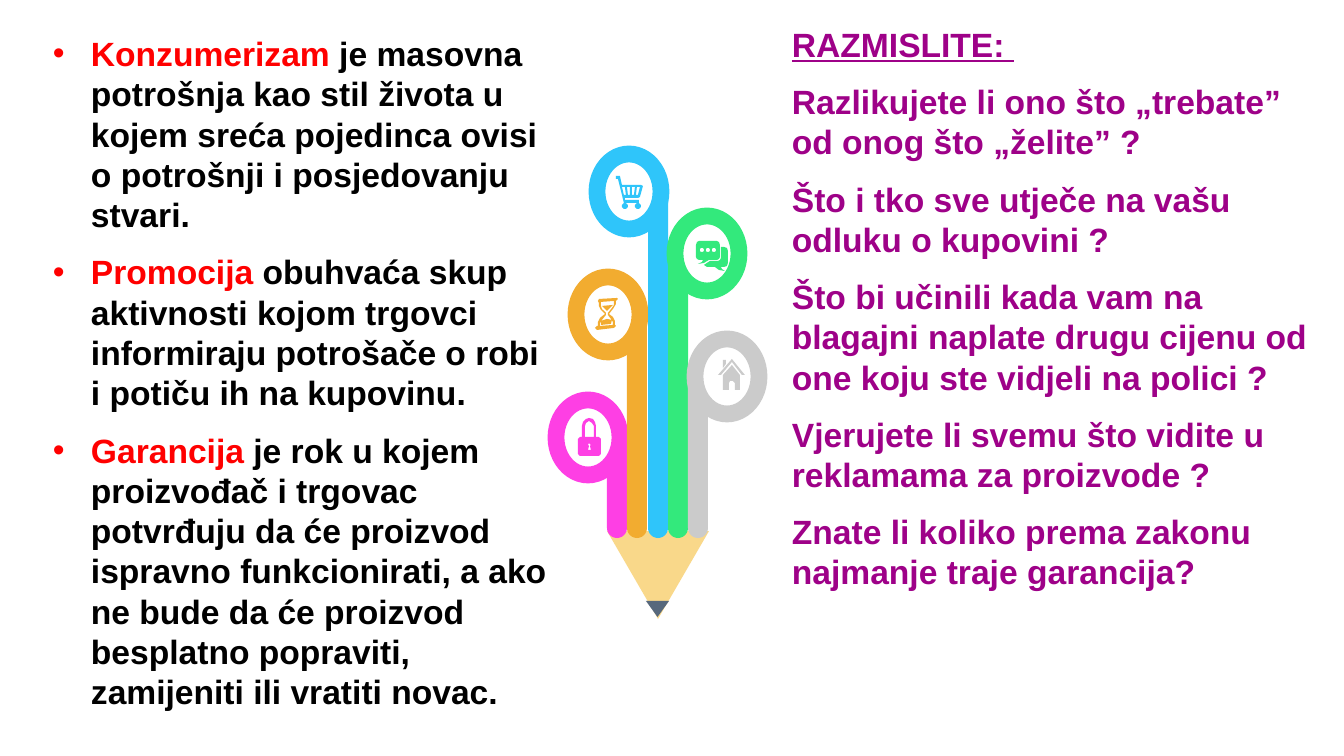
import lxml.etree
import pptx
import pptx.dml.color
import pptx.enum.shapes
import pptx.enum.text
import pptx.oxml.ns
import pptx.util

PX = 914400 / 100.8
RGB = pptx.dml.color.RGBColor
SHAPE = pptx.enum.shapes.MSO_SHAPE

WHITE = RGB(0xFF, 0xFF, 0xFF)
BLACK = RGB(0x00, 0x00, 0x00)
RED = RGB(0xFF, 0x00, 0x00)
PURPLE = RGB(0x9E, 0x01, 0x88)
WOOD = RGB(0xF5, 0xB3, 0x17)
LEAD = RGB(0x57, 0x68, 0x7C)
PINK = RGB(0xFE, 0x3F, 0xE4)
ORANGE = RGB(0xF2, 0xAC, 0x30)
BLUE = RGB(0x2F, 0xC5, 0xFA)
GREEN = RGB(0x33, 0xE9, 0x7C)
GREY = RGB(0xCB, 0xCB, 0xCB)

# Pencil strips, left to right: colour, top, ring offset from the strip
STRIPS = [(PINK, 438, -51), (ORANGE, 315, -51), (BLUE, 192, -51),
          (GREEN, 254, 7), (GREY, 377, 7)]
STRIP_LEFT, STRIP_PITCH, STRIP_W, STRIP_BOTTOM = 607, 20.25, 20, 538
RING_W, RING_H = 64, 75

TERMS = [
    ("Konzumerizam", " je masovna potrošnja kao stil života u kojem sreća "
     "pojedinca ovisi o potrošnji i posjedovanju stvari."),
    ("Promocija", " obuhvaća skup aktivnosti kojom trgovci informiraju "
     "potrošače o robi i potiču ih na kupovinu."),
    ("Garancija", " je rok u kojem proizvođač i trgovac potvrđuju da će "
     "proizvod ispravno funkcionirati, a ako ne bude da će proizvod "
     "besplatno popraviti, zamijeniti ili vratiti novac."),
]
HEADING = "RAZMISLITE: "
QUESTIONS = [
    "Razlikujete li ono što „trebate” od onog što „želite” ?",
    "Što i tko sve utječe na vašu odluku o kupovini ?",
    "Što bi učinili kada vam na blagajni naplate drugu cijenu od one koju "
    "ste vidjeli na polici ?",
    "Vjerujete li svemu što vidite u reklamama za proizvode ?",
    "Znate li koliko prema zakonu najmanje traje garancija?",
]


def px(n):
    return pptx.util.Emu(round(n * PX))


def dot(cx, cy, r):
    corners = [(r, -1), (r, 1), (1, r), (-1, r),
               (-r, 1), (-r, -1), (-1, -r), (1, -r)]
    return [(cx + x, cy + y) for x, y in corners]


# Icons: colour, left, top, outlines (inner outlines are holes)
CHAT = (GREEN, 696, 241, [
    [(3, 0), (21, 0), (23, 1), (24, 4), (24, 16), (23, 18), (21, 19), (13, 19),
     (8, 22), (2, 23), (6, 21), (7, 19), (3, 19), (1, 18), (0, 16), (0, 4), (1, 1)],
    [(25, 6), (28, 6), (31, 7), (32, 10), (32, 22), (31, 25), (28, 26), (25, 26),
     (26, 28), (29, 30), (23, 29), (19, 26), (11, 26), (8, 24), (14, 20),
     (22, 20), (24, 19), (25, 17)],
    dot(6, 9, 2), dot(12, 9, 2), dot(18, 9, 2)])
HOURGLASS = (ORANGE, 595, 298, [
    [(4, 1), (22, 0), (23, 1), (21, 3), (21, 6), (18, 11), (14, 16), (18, 19),
     (20, 23), (20, 27), (21, 28), (19, 30), (2, 32), (0, 30), (2, 28), (3, 28),
     (3, 24), (5, 20), (10, 16), (6, 12), (4, 8), (4, 5), (3, 3)],
    [(6, 4), (6, 8), (7, 11), (11, 15), (11, 17), (7, 22), (5, 25), (5, 28),
     (18, 27), (18, 24), (16, 21), (13, 17), (13, 15), (17, 10), (19, 7), (19, 3)],
    [(7, 8), (18, 7), (16, 9), (12, 13), (8, 9)],
    [(12, 21), (17, 22), (16, 26), (6, 27), (6, 23)]])
CART = (BLUE, 616, 176, [
    [(0, 0), (4, 0), (6, 9), (25, 9), (27, 10), (24, 21), (22, 22), (9, 22),
     (9, 24), (23, 24), (23, 27), (8, 27), (2, 3), (0, 3)],
    [(6, 11), (8, 19), (10, 19), (9, 11)],
    [(11, 11), (12, 19), (14, 19), (14, 11)],
    [(16, 11), (16, 19), (18, 19), (19, 11)],
    [(21, 11), (20, 19), (22, 19), (24, 11)],
    dot(9, 30, 3), dot(22, 30, 3)])
HOUSE = (GREY, 718, 359, [
    [(14, 6), (22, 16), (22, 31), (17, 31), (17, 24), (15, 22), (12, 22),
     (11, 24), (11, 31), (5, 31), (5, 16)],
    [(5, 1), (8, 1), (8, 5), (5, 9)],
    [(14, 0), (27, 16), (24, 16), (14, 3), (3, 16), (0, 16)]])
LOCK = (PINK, 578, 418, [
    [(2, 19), (4, 19), (4, 8), (5, 4), (8, 1), (11, 0), (15, 1), (17, 4), (18, 8),
     (18, 19), (21, 19), (23, 21), (23, 36), (21, 38), (2, 38), (0, 36), (0, 21)],
    [(7, 19), (7, 8), (8, 5), (11, 3), (14, 5), (16, 8), (16, 19)],
    [(10, 32), (13, 32), (12, 28), (13, 27), (11, 25), (10, 27), (11, 28)]])


def paint(sp, fill, line=None):
    sp.shadow.inherit = False
    sp.fill.solid()
    sp.fill.fore_color.rgb = fill
    if line is None:
        sp.line.fill.background()
    else:
        sp.line.color.rgb = line
        sp.line.width = pptx.util.Pt(12)


def add_preset(shapes, kind, left, top, width, height, fill,
               line=None, adjust=(), rotation=0):
    sp = shapes.add_shape(kind, px(left), px(top), px(width), px(height))
    for i, value in enumerate(adjust):
        sp.adjustments[i] = value
    sp.rotation = rotation
    paint(sp, fill, line)
    return sp


def add_pencil(s):
    shapes = s.shapes.add_group_shape().shapes
    # Tip
    wood = add_preset(shapes, SHAPE.TRAPEZOID, 607, 531, 102, 88, WOOD,
                      adjust=[0.79], rotation=180)
    color = wood.fill._xPr.find(".//" + pptx.oxml.ns.qn("a:srgbClr"))
    lxml.etree.SubElement(color, pptx.oxml.ns.qn("a:alpha"), val="50000")
    add_preset(shapes, SHAPE.ISOSCELES_TRIANGLE, 646, 601, 23, 16, LEAD, rotation=180)
    # Strips with rings
    for i, (color, top, offset) in enumerate(STRIPS):
        left = round(STRIP_LEFT + i * STRIP_PITCH)
        add_preset(shapes, SHAPE.ROUND_2_SAME_RECTANGLE, left, top, STRIP_W,
                   STRIP_BOTTOM - top, color, adjust=[0.5, 0], rotation=180)
        add_preset(shapes, SHAPE.OVAL, left + offset, top - RING_H // 2 - 1,
                   RING_W, RING_H, WHITE, line=color)


def add_icon(s, color, left, top, outlines):
    builder = s.shapes.build_freeform(*outlines[0][0], scale=PX)
    builder.add_line_segments(outlines[0][1:])
    for outline in outlines[1:]:
        builder.move_to(*outline[0])
        builder.add_line_segments(outline[1:])
    paint(builder.convert_to_shape(px(left), px(top)), color)


def add_text(s, left, top, width, height, paragraphs, bullet=False):
    """Each paragraph is a list of (text, colour, underline) runs."""
    tf = s.shapes.add_textbox(px(left), px(top), px(width), px(height)).text_frame
    tf.word_wrap = True
    tf.auto_size = pptx.enum.text.MSO_AUTO_SIZE.SHAPE_TO_FIT_TEXT
    for i, runs in enumerate(paragraphs):
        p = tf.paragraphs[0] if i == 0 else tf.add_paragraph()
        p.space_after = pptx.util.Pt(12)
        if bullet:
            pPr = p._p.get_or_add_pPr()
            pPr.set("marL", str(px(38)))
            pPr.set("indent", str(-px(38)))
            lxml.etree.SubElement(pPr, pptx.oxml.ns.qn("a:buFont"), typeface="Arial")
            lxml.etree.SubElement(pPr, pptx.oxml.ns.qn("a:buChar"), char="•")
        for text, color, underline in runs:
            r = p.add_run()
            r.text = text
            r.font.name = "Arial"
            r.font.size = pptx.util.Pt(24)
            r.font.bold = True
            r.font.underline = underline
            r.font.color.rgb = color


def main():
    prs = pptx.Presentation()
    prs.slide_width, prs.slide_height = px(1344), px(756)
    s = prs.slides.add_slide(prs.slide_layouts[6])

    # Pencil
    add_pencil(s)
    for icon in (CHAT, HOURGLASS, CART, HOUSE, LOCK):
        add_icon(s, *icon)

    # Definitions
    add_text(s, 43, 28, 523, 696,
             [[(term, RED, None), (rest, BLACK, None)] for term, rest in TERMS],
             bullet=True)

    # Questions
    add_text(s, 782, 19, 543, 584,
             [[(HEADING, PURPLE, True)]] + [[(q, PURPLE, None)] for q in QUESTIONS])

    prs.save("out.pptx")


if __name__ == "__main__":
    main()
